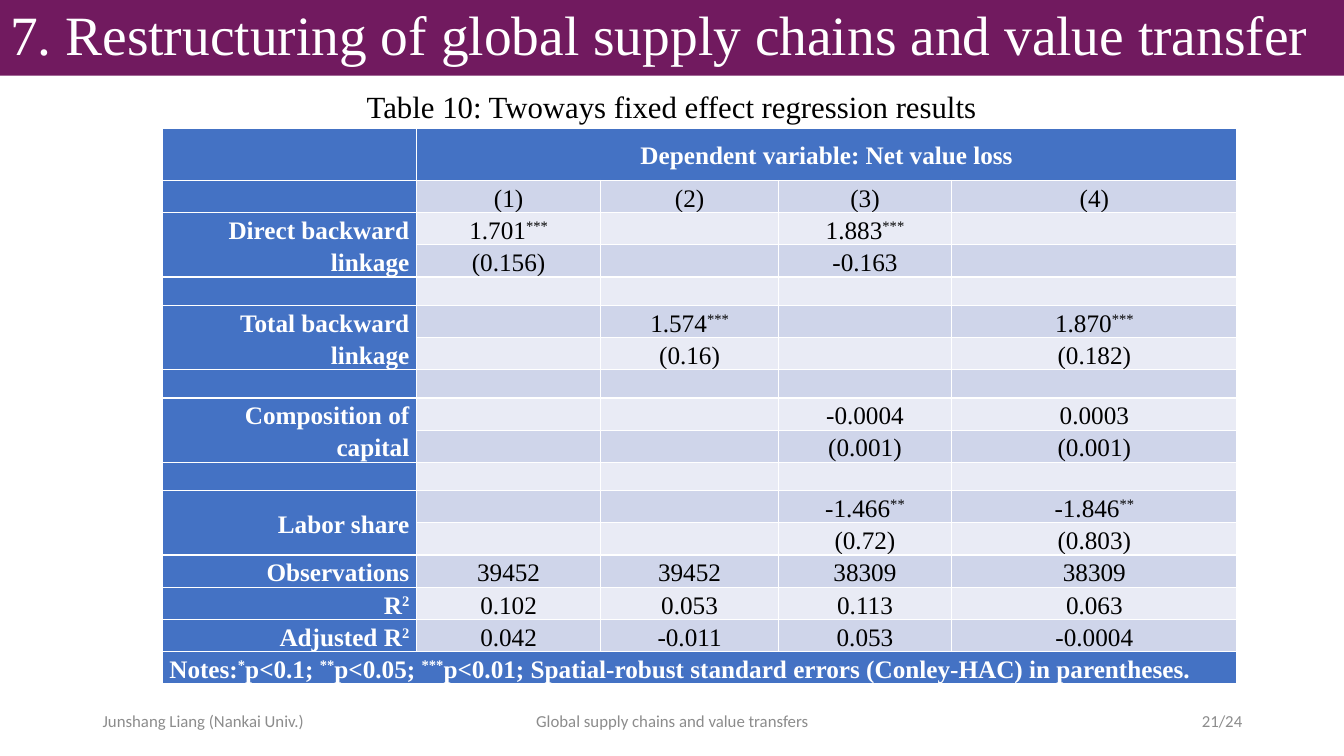
"""Build the slide with the table of fixed effect regression results."""
from pptx import Presentation
from pptx.dml.color import RGBColor
from pptx.enum.text import MSO_ANCHOR, MSO_AUTO_SIZE, PP_ALIGN
from pptx.util import Inches, Pt

HUES = {"plum": "711A5F", "blue": "4472C4", "dark": "CFD5EA", "pale": "E9EBF5",
        "white": "FFFFFF", "black": "000000", "gray": "8C8C8C"}
SERIF = "Times New Roman"
LEFT, MID, RIGHT = PP_ALIGN.LEFT, PP_ALIGN.CENTER, PP_ALIGN.RIGHT


def style(para, text, size, hue, align, face=SERIF, bold=False):
    """Fill a paragraph; parts between carets are raised."""
    para.alignment = align
    for i, part in enumerate(text.split("^")):
        if part:
            run = para.add_run()
            run.text = part
            run.font.size, run.font.name, run.font.bold = Pt(size), face, bold
            run.font.color.rgb = RGBColor.from_string(HUES[hue])
            if i % 2:
                run.font._element.set("baseline", "30000")


def label(box, text, size, hue, align, face):
    """Add a text box with one line."""
    frame = slide.shapes.add_textbox(*map(Inches, box)).text_frame
    frame.word_wrap = True
    style(frame.paragraphs[0], text, size, hue, align, face)
    return frame


deck = Presentation()
deck.slide_width, deck.slide_height = Inches(13.33), Inches(7.5)
slide = deck.slides.add_slide(deck.slide_layouts[5])

title = slide.shapes.title
title.left, title.top, title.width, title.height = map(Inches, (0, 0, 13.33, 0.75))
title.fill.solid()
title.fill.fore_color.rgb = RGBColor.from_string(HUES["plum"])
frame = title.text_frame
frame.auto_size = MSO_AUTO_SIZE.NONE
frame.vertical_anchor = MSO_ANCHOR.MIDDLE
frame.paragraphs[0].line_spacing = 0.9
style(frame.paragraphs[0], "7. Restructuring of global supply chains and value transfer",
      39.6, "white", LEFT)

rows = [
    ["", "Dependent variable: Net value loss", "", "", ""],
    ["", "(1)", "(2)", "(3)", "(4)"],
    ["Direct backward linkage", "1.701^***^", "", "1.883^***^", ""],
    ["", "(0.156)", "", "-0.163", ""],
    [""] * 5,
    ["Total backward linkage", "", "1.574^***^", "", "1.870^***^"],
    ["", "", "(0.16)", "", "(0.182)"],
    [""] * 5,
    ["Composition of capital", "", "", "-0.0004", "0.0003"],
    ["", "", "", "(0.001)", "(0.001)"],
    [""] * 5,
    ["Labor share", "", "", "-1.466^**^", "-1.846^**^"],
    ["", "", "", "(0.72)", "(0.803)"],
    ["Observations", "39452", "39452", "38309", "38309"],
    ["R^2^", "0.102", "0.053", "0.113", "0.063"],
    ["Adjusted R^2^", "0.042", "-0.011", "0.053", "-0.0004"],
    ["Notes:^*^p<0.1; ^**^p<0.05; ^***^p<0.01; Spatial-robust standard errors "
     "(Conley-HAC) in parentheses.", "", "", "", ""],
]
last = len(rows) - 1
grid = slide.shapes.add_table(len(rows), 5, Inches(1.61), Inches(1.27),
                              Inches(10.66), Inches(5.49)).table
grid.first_col = True
for col, width in zip(grid.columns, (2.52, 1.83, 1.76, 1.72, 2.83)):
    col.width = Inches(width)

for r, row in enumerate(rows):
    grid.rows[r].height = Inches(0.52 if r == 0 else 0.32 if any(row) else 0.28)
    for c, text in enumerate(row):
        cell = grid.cell(r, c)
        head = r in (0, last) or c == 0
        cell.margin_left = cell.margin_right = Inches(0.07)
        cell.margin_top = cell.margin_bottom = 0
        cell.vertical_anchor = MSO_ANCHOR.MIDDLE
        cell.fill.solid()
        fill = "blue" if head else "dark" if r % 2 else "pale"
        cell.fill.fore_color.rgb = RGBColor.from_string(HUES[fill])
        para = cell.text_frame.paragraphs[0]
        if text:
            para.line_spacing, para.space_after = 1.15, Pt(8)
            align = LEFT if r == last else MID if c else RIGHT
            style(para, text, 18, "white" if head else "black", align, bold=head)
        else:
            para._p.get_or_add_endParaRPr().set("sz", "1200")

grid.cell(0, 1).merge(grid.cell(0, 4))
grid.cell(last, 0).merge(grid.cell(last, 4))
for r in (2, 5, 8, 11):
    grid.cell(r, 0).merge(grid.cell(r + 1, 0))

para = label((1.68, 0.77, 9.96, 0.49), "Table 10: Twoways fixed effect regression results",
             22, "black", MID, SERIF).paragraphs[0]
para.line_spacing, para.space_after = 1.15, Pt(8)

for left, width, text, align in (
        (0.92, 3, "Junshang Liang (Nankai Univ.)", LEFT),
        (4.42, 4.5, "Global supply chains and value transfers", MID),
        (9.42, 3, "21/24", RIGHT)):
    foot = label((left, 6.95, width, 0.4), text, 12, "gray", align, "Calibri")
    foot.vertical_anchor = MSO_ANCHOR.MIDDLE

deck.save("out.pptx")
